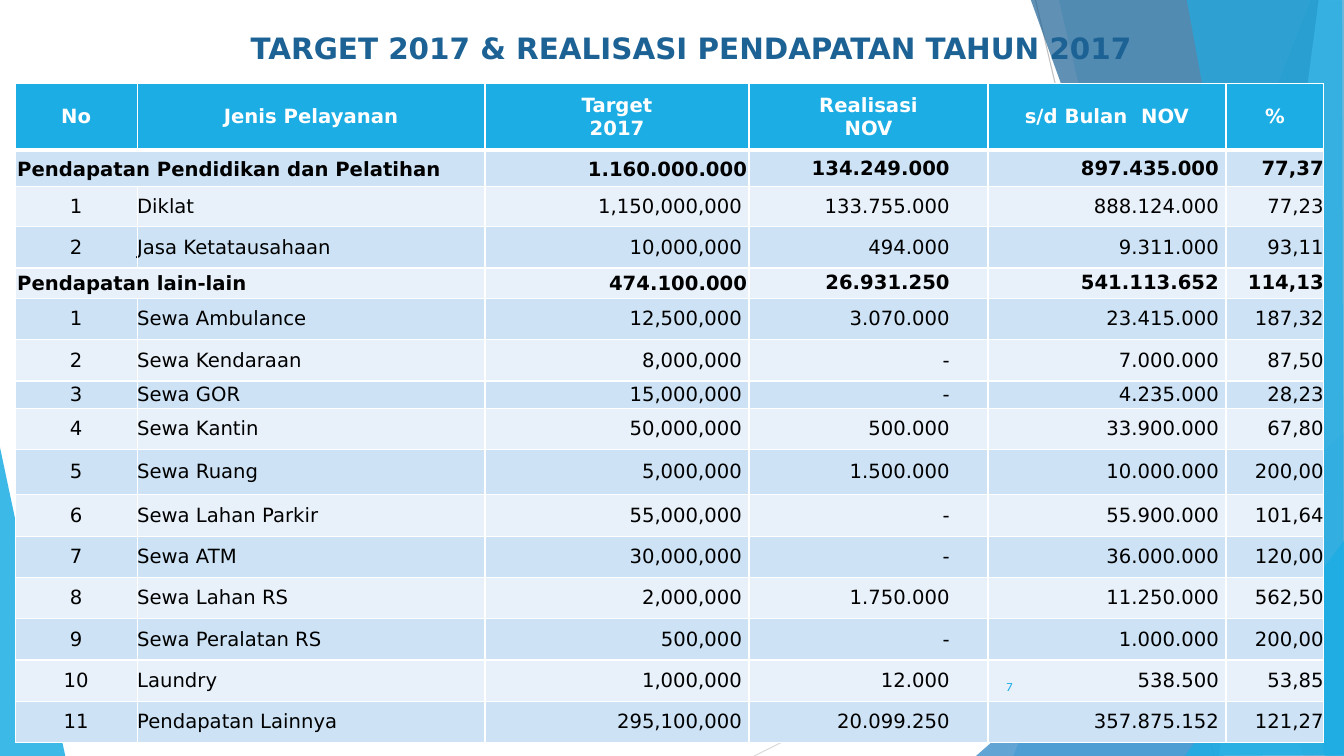
from dataclasses import dataclass

from lxml import etree
from pptx import Presentation
from pptx.dml.color import RGBColor
from pptx.enum.shapes import MSO_CONNECTOR
from pptx.enum.text import MSO_ANCHOR, PP_ALIGN
from pptx.oxml.ns import qn
from pptx.util import Inches, Pt

LEFT, CENTER, RIGHT = PP_ALIGN.LEFT, PP_ALIGN.CENTER, PP_ALIGN.RIGHT
TOP, MIDDLE = MSO_ANCHOR.TOP, MSO_ANCHOR.MIDDLE
STRAIGHT = MSO_CONNECTOR.STRAIGHT


@dataclass(frozen=True)
class Theme:
    font: str = "DejaVu Sans"
    number_font: str = "Karla"
    sky: str = "1CADE4"
    blue: str = "2683C6"
    navy: str = "1D6294"
    pale: str = "77CEEF"
    white: str = "FFFFFF"
    black: str = "000000"
    bands: tuple = ("CDE3F5", "E8F1FA")
    title_size: int = 21
    table_size: int = 14
    number_size: int = 9


THEME = Theme()

# Content
TITLE = "TARGET 2017 & REALISASI PENDAPATAN TAHUN 2017"
PAGE_NUMBER = "7"
HEADERS = ["No", "Jenis Pelayanan", "Target\n2017", "Realisasi\nNOV",
           "s/d Bulan  NOV", "%"]
# A row with no number is a section total
ROWS = [
    ("", "Pendapatan Pendidikan dan Pelatihan", "1.160.000.000", "134.249.000", "897.435.000", "77,37"),
    ("1", "Diklat", "1,150,000,000", "133.755.000", "888.124.000", "77,23"),
    ("2", "Jasa Ketatausahaan", "10,000,000", "494.000", "9.311.000", "93,11"),
    ("", "Pendapatan lain-lain", "474.100.000", "26.931.250", "541.113.652", "114,13"),
    ("1", "Sewa Ambulance", "12,500,000", "3.070.000", "23.415.000", "187,32"),
    ("2", "Sewa Kendaraan", "8,000,000", "-", "7.000.000", "87,50"),
    ("3", "Sewa GOR", "15,000,000", "-", "4.235.000", "28,23"),
    ("4", "Sewa Kantin", "50,000,000", "500.000", "33.900.000", "67,80"),
    ("5", "Sewa Ruang", "5,000,000", "1.500.000", "10.000.000", "200,00"),
    ("6", "Sewa Lahan Parkir", "55,000,000", "-", "55.900.000", "101,64"),
    ("7", "Sewa ATM", "30,000,000", "-", "36.000.000", "120,00"),
    ("8", "Sewa Lahan RS", "2,000,000", "1.750.000", "11.250.000", "562,50"),
    ("9", "Sewa Peralatan RS", "500,000", "-", "1.000.000", "200,00"),
    ("10", "Laundry", "1,000,000", "12.000", "538.500", "53,85"),
    ("11", "Pendapatan Lainnya", "295,100,000", "20.099.250", "357.875.152", "121,27"),
]

# Table layout
COLUMN_WIDTHS = [1.21, 3.45, 2.62, 2.37, 2.36, 0.97]
HEADER_HEIGHT, ROW_HEIGHT = 0.66, 0.41
SPECIAL_HEIGHTS = {1: 0.36, 2: 0.4, 4: 0.3, 7: 0.27, 9: 0.45}
ALIGNMENTS = [CENTER, LEFT, RIGHT, RIGHT, RIGHT, RIGHT]
RIGHT_INSETS = [0, 0, 0.07, 0.38, 0.07, 0]
HEADER_INSETS = (0.2, 0.07, 0.2, 0.07)
SECTION_INSETS = (0.02, 0.02, 0.02, 0)

# Background: corner points, colour, opacity in percent
LEFT_FACET = ([(-0.01, 4.39), (0.65, 7.51), (-0.01, 7.5)], THEME.sky, 85)
RAYS = [((7.48, 7.5), (13.34, 4.57), "D9D9D9"),
        ((10.27, 0), (12.04, 7.5), "BFBFBF")]
RIGHT_FACETS = [
    ([(13, 0), (10.05, 7.5), (13.35, 7.51), (13.34, 0.01)], THEME.sky, 30),
    ([(10.5, -0.01), (12.26, 7.5), (13.34, 7.5), (13.34, -0.01)], THEME.sky, 20),
    ([(9.68, 7.5), (13.33, 4.29), (13.34, 7.5)], THEME.blue, 72),
    ([(10.22, -0.01), (12.93, 7.5), (13.34, 7.49), (13.34, -0.01)], THEME.navy, 70),
    ([(13.08, -0.01), (12.09, 7.5), (13.34, 7.5), (13.34, -0.01)], THEME.pale, 70),
    ([(11.77, -0.01), (13.14, 7.5), (13.33, 7.5), (13.31, -0.01)], THEME.sky, 65),
    ([(11.75, 7.5), (13.34, 5.35), (13.34, 7.49)], THEME.sky, 80),
]


def rgb(color):
    return RGBColor.from_string(color)


def place(shape, left, top, width, height):
    shape.left, shape.top = Inches(left), Inches(top)
    shape.width, shape.height = Inches(width), Inches(height)


def write(frame, text, size, color, align, bold=False, font=THEME.font):
    frame.text = text
    for paragraph in frame.paragraphs:
        paragraph.alignment = align
        for run in paragraph.runs:
            run.font.name, run.font.size = font, Pt(size)
            run.font.bold, run.font.color.rgb = bold, rgb(color)


def add_facet(slide, corners, color, opacity):
    points = [(Inches(x), Inches(y)) for x, y in corners]
    builder = slide.shapes.build_freeform(*points[0])
    builder.add_line_segments(points[1:])
    facet = builder.convert_to_shape()
    facet.shadow.inherit = False
    facet.fill.solid()
    facet.fill.fore_color.rgb = rgb(color)
    facet.line.fill.background()
    tint = facet.fill._xPr.find(qn("a:solidFill"))[0]
    etree.SubElement(tint, qn("a:alpha"), val=str(opacity * 1000))
    return facet


def add_ray(slide, start, end, color):
    ray = slide.shapes.add_connector(STRAIGHT, *map(Inches, start + end))
    ray.line.color.rgb = rgb(color)
    ray.line.width = Pt(0.75)
    etree.SubElement(ray.element.spPr, qn("a:effectLst"))


def format_cell(cell, fill, insets, bottom_width=1):
    properties = cell._tc.get_or_add_tcPr()
    for side, width in (("L", 1), ("R", 1), ("T", 1), ("B", bottom_width)):
        border = etree.SubElement(properties, qn(f"a:ln{side}"), w=str(Pt(width)))
        solid = etree.SubElement(border, qn("a:solidFill"))
        etree.SubElement(solid, qn("a:srgbClr"), val=THEME.white)
    cell.fill.solid()
    cell.fill.fore_color.rgb = rgb(fill)
    cell.vertical_anchor = MIDDLE
    (cell.margin_left, cell.margin_top,
     cell.margin_right, cell.margin_bottom) = map(Inches, insets)


def add_income_table(slide):
    heights = [HEADER_HEIGHT] + [SPECIAL_HEIGHTS.get(i, ROW_HEIGHT)
                                 for i in range(1, len(ROWS) + 1)]
    table = slide.shapes.add_table(
        len(heights), len(HEADERS), Inches(0.15), Inches(0.83),
        Inches(sum(COLUMN_WIDTHS)), Inches(sum(heights))).table
    for column, width in zip(table.columns, COLUMN_WIDTHS):
        column.width = Inches(width)
    for row, height in zip(table.rows, heights):
        row.height = Inches(height)

    # Header row
    for c, header in enumerate(HEADERS):
        cell = table.cell(0, c)
        format_cell(cell, THEME.sky, HEADER_INSETS, bottom_width=3)
        write(cell.text_frame, header, THEME.table_size, THEME.white, CENTER, True)

    # Sections and their services
    for r, (number, service, *amounts) in enumerate(ROWS, start=1):
        is_section = not number
        values = [number or service, "" if is_section else service, *amounts]
        for c, value in enumerate(values):
            cell = table.cell(r, c)
            insets = (0, 0, RIGHT_INSETS[c], 0)
            if is_section and c <= 2:
                insets = SECTION_INSETS
            format_cell(cell, THEME.bands[(r - 1) % 2], insets)
            align = LEFT if is_section and c == 0 else ALIGNMENTS[c]
            write(cell.text_frame, value, THEME.table_size, THEME.black,
                  align, is_section)
        if is_section:
            table.cell(r, 0).merge(table.cell(r, 1))


def main():
    deck = Presentation()
    deck.slide_width, deck.slide_height = Inches(13.33), Inches(7.5)
    slide = deck.slides.add_slide(deck.slide_layouts[5])

    # Background facets
    add_facet(slide, *LEFT_FACET)
    for ray in RAYS:
        add_ray(slide, *ray)
    for facet in RIGHT_FACETS:
        front_facet = add_facet(slide, *facet)

    # Title, in front of the facets
    title = slide.shapes.title
    front_facet.element.addnext(title.element)
    place(title, 0.67, 0.25, 12.37, 0.52)
    title.text_frame.vertical_anchor = TOP
    write(title.text_frame, TITLE, THEME.title_size, THEME.navy, CENTER, True)

    add_income_table(slide)

    # Page number
    page = slide.shapes.add_textbox(
        Inches(9.39), Inches(6.61), Inches(0.75), Inches(0.4)).text_frame
    page.word_wrap = True
    page.vertical_anchor = MIDDLE
    write(page, PAGE_NUMBER, THEME.number_size, THEME.sky, RIGHT,
          font=THEME.number_font)

    deck.save("out.pptx")


if __name__ == "__main__":
    main()
